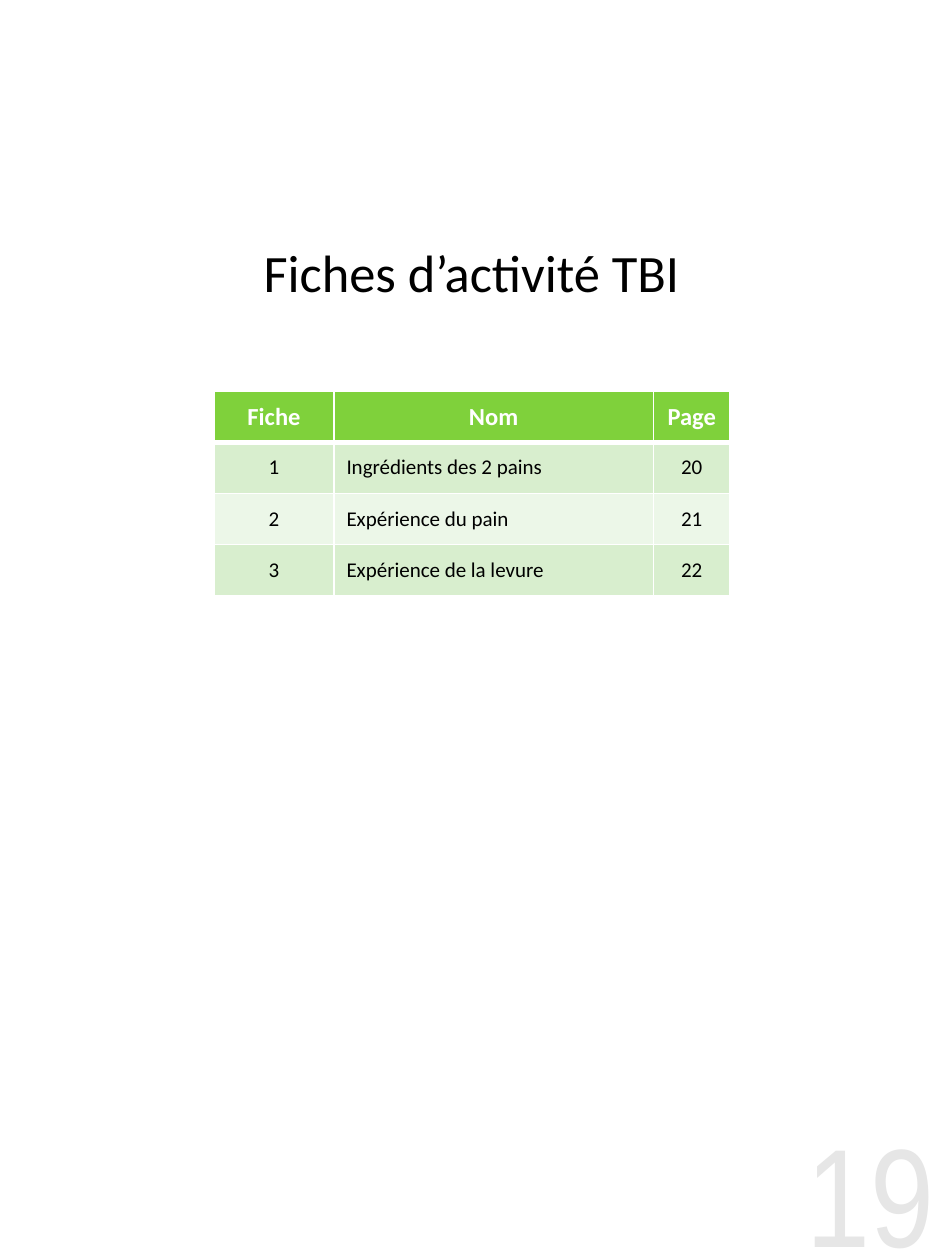
from lxml.etree import SubElement
from pptx import Presentation
from pptx.dml.color import RGBColor
from pptx.enum.text import MSO_ANCHOR, PP_ALIGN
from pptx.oxml.ns import qn
from pptx.util import Pt

WHITE = RGBColor(0xFF, 0xFF, 0xFF)
BLACK = RGBColor(0, 0, 0)
GREEN = RGBColor(0x7F, 0xD1, 0x3B)
BANDS = RGBColor(0xD8, 0xEE, 0xCE), RGBColor(0xEC, 0xF7, 0xE8)
GREY = RGBColor(0xE6, 0xE6, 0xE6)

ROWS = [
    ("Fiche", "Nom", "Page"),
    ("1", "Ingrédients des 2 pains", "20"),
    ("2", "Expérience du pain", "21"),
    ("3", "Expérience de la levure", "22"),
]
WIDTHS = 68.4, 182.6, 43.8
ALIGNS = PP_ALIGN.CENTER, PP_ALIGN.LEFT, PP_ALIGN.CENTER


class Sheet:
    def __init__(self, slide, font):
        self.slide = slide
        self.font = font

    def label(self, frame, text, size, color, align, bold=False, font=None):
        para = frame.paragraphs[0]
        para.text = text
        para.alignment = align
        para.font.name = font or self.font
        para.font.size = Pt(size)
        para.font.bold = bold
        para.font.color.rgb = color

    def title(self, text, left, top, width, height):
        shape = self.slide.shapes.title
        shape.left, shape.top = Pt(left), Pt(top)
        shape.width, shape.height = Pt(width), Pt(height)
        shape.text_frame.vertical_anchor = MSO_ANCHOR.MIDDLE
        self.label(shape.text_frame, text, 30, BLACK, PP_ALIGN.CENTER)

    def edge(self, cell, low):
        """Draw white cell borders; low is the width of the bottom one."""
        props = cell._tc.get_or_add_tcPr()
        sides = ("lnL", 1), ("lnR", 1), ("lnT", 1), ("lnB", low)
        for spot, (side, width) in enumerate(sides):
            line = SubElement(props, qn(f"a:{side}"), w=str(Pt(width)))
            fill = SubElement(line, qn("a:solidFill"))
            SubElement(fill, qn("a:srgbClr"), val=str(WHITE))
            props.insert(spot, line)

    def table(self, rows, left, top, height):
        frame = self.slide.shapes.add_table(
            len(rows), len(WIDTHS), Pt(left), Pt(top),
            Pt(sum(WIDTHS)), Pt(height * len(rows)))
        grid = frame.table
        for col, width in zip(grid.columns, WIDTHS):
            col.width = Pt(width)
        for r, row in enumerate(rows):
            grid.rows[r].height = Pt(height)
            head = r == 0
            for c, text in enumerate(row):
                cell = grid.cell(r, c)
                cell.vertical_anchor = MSO_ANCHOR.MIDDLE
                cell.fill.solid()
                cell.fill.fore_color.rgb = GREEN if head else BANDS[(r - 1) % 2]
                self.edge(cell, 3 if head or r == 0 else 1)
                self.label(cell.text_frame, text, 14 if head else 12,
                           WHITE if head else BLACK,
                           PP_ALIGN.CENTER if head else ALIGNS[c], head)

    def number(self, text, left, top, width, height):
        box = self.slide.shapes.add_textbox(
            Pt(left), Pt(top), Pt(width), Pt(height))
        frame = box.text_frame
        frame.word_wrap = True
        frame.margin_left = frame.margin_right = 0
        frame.margin_top = frame.margin_bottom = 0
        self.label(frame, text, 80, GREY, PP_ALIGN.RIGHT, font="Arial Narrow")


def main():
    deck = Presentation()
    deck.slide_width, deck.slide_height = Pt(540), Pt(720)
    sheet = Sheet(deck.slides.add_slide(deck.slide_layouts[5]), "Calibri")
    sheet.title("Fiches d’activité TBI", 101.5, 121, 336, 68.4)
    sheet.table(ROWS, 122.4, 223.5, 29.2)
    sheet.number("19", 434, 633, 100, 87)
    deck.save("out.pptx")


if __name__ == "__main__":
    main()
